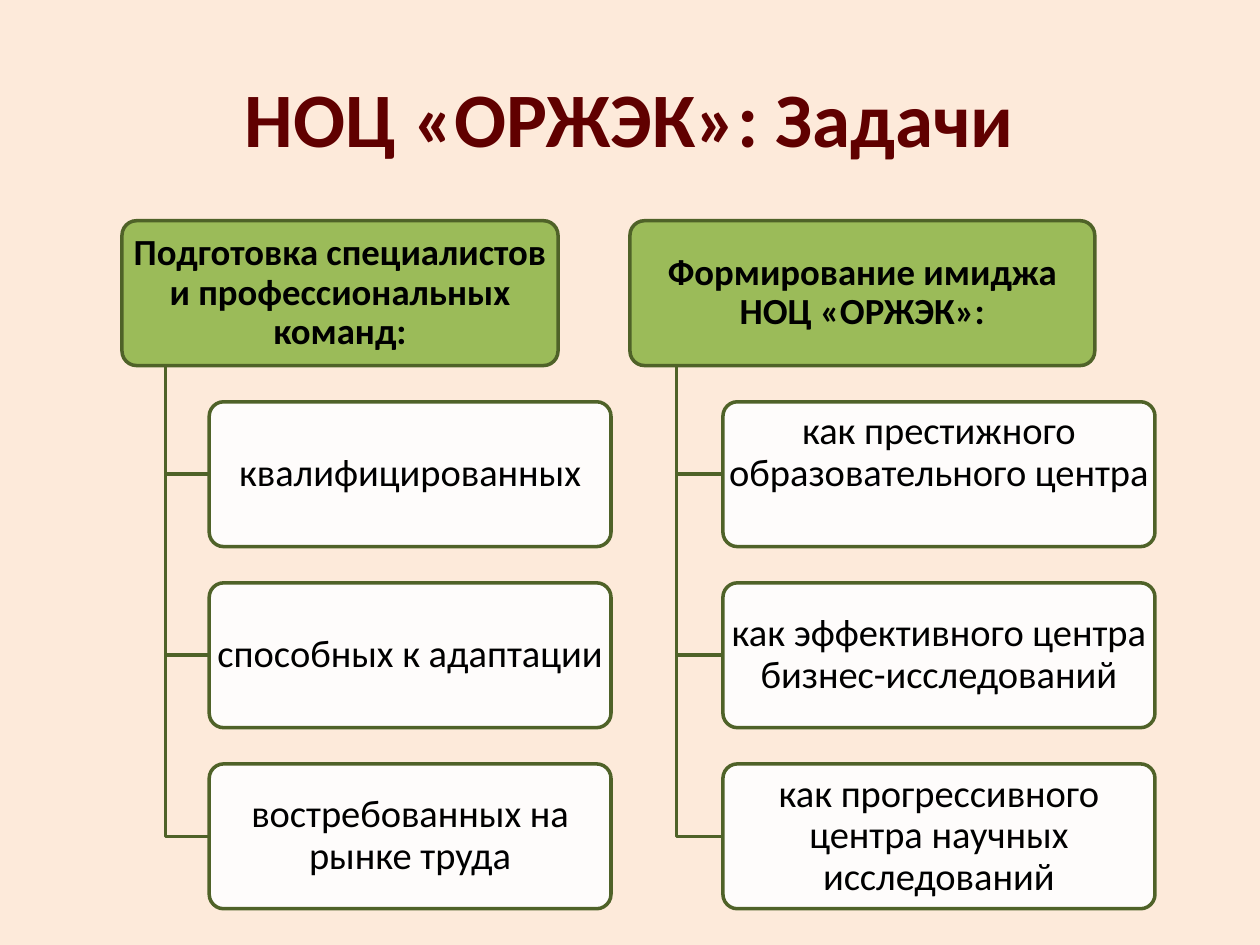
from dataclasses import dataclass

import pptx
import pptx.dml.color
import pptx.enum.shapes
import pptx.enum.text
import pptx.oxml
import pptx.oxml.ns
import pptx.util
from pptx.util import Cm

COLORS = {
    "background": "FDEADA",
    "title": "600000",
    "header": "9BBB59",
    "task": "FFFFFF",
    "line": "4F6228",
    "text": "000000",
}
TOP = 4.45
BOX_HEIGHT = 2.92
PITCH = 3.65


@dataclass
class Task:
    text: str
    bottom: float = 0


@dataclass
class Branch:
    left: float
    width: float
    task_width: float
    header: str
    tasks: list[Task]


BRANCHES = [
    Branch(2.46, 8.79, 8.1, "Подготовка специалистов и профессиональных команд:", [
        Task("квалифицированных"),
        Task("способных к адаптации"),
        Task("востребованных на рынке труда"),
    ]),
    Branch(12.7, 9.37, 8.71, "Формирование имиджа НОЦ «ОРЖЭК»:", [
        Task("как престижного образовательного центра", bottom=0.85),
        Task("как эффективного центра бизнес-исследований"),
        Task("как прогрессивного центра научных исследований"),
    ]),
]


def rgb(name: str) -> pptx.dml.color.RGBColor:
    return pptx.dml.color.RGBColor.from_string(COLORS[name])


def write(sp, text: str, *, size: float, color: str = "text", bold: bool = False,
          spacing: float = 0.9, bottom: float = 0) -> None:
    tf = sp.text_frame
    tf.word_wrap = True
    tf.vertical_anchor = pptx.enum.text.MSO_ANCHOR.MIDDLE
    tf.margin_left = tf.margin_right = tf.margin_top = 0
    tf.margin_bottom = Cm(bottom)
    p = tf.paragraphs[0]
    p.alignment = pptx.enum.text.PP_ALIGN.CENTER
    p.line_spacing = spacing
    r = p.add_run()
    r.text = text
    r.font.name = "Calibri"
    r.font.size = pptx.util.Pt(size)
    r.font.bold = bold
    r.font.color.rgb = rgb(color)


def outline(sp) -> None:
    sp.shadow.inherit = False
    sp.line.color.rgb = rgb("line")
    sp.line.width = pptx.util.Pt(2)


def add_box(s, left: float, top: float, width: float, fill: str):
    sp = s.shapes.add_shape(pptx.enum.shapes.MSO_SHAPE.ROUNDED_RECTANGLE,
                            Cm(left), Cm(top), Cm(width), Cm(BOX_HEIGHT))
    sp.adjustments[0] = 0.1
    sp.fill.solid()
    sp.fill.fore_color.rgb = rgb(fill)
    outline(sp)
    return sp


def set_opacity(sp, percent: int) -> None:
    ns = pptx.oxml.ns.qn
    clr = sp.fill._xPr.find(ns("a:solidFill")).find(ns("a:srgbClr"))
    alpha = pptx.oxml.parse_xml(
        f'<a:alpha {pptx.oxml.ns.nsdecls("a")} val="{percent * 1000}"/>')
    clr.append(alpha)


def add_elbow(s, x: float, top: float, right: float, bottom: float) -> None:
    fb = s.shapes.build_freeform(Cm(x), Cm(top))
    fb.add_line_segments([(Cm(x), Cm(bottom)), (Cm(right), Cm(bottom))], close=False)
    sp = fb.convert_to_shape()
    sp.fill.background()
    outline(sp)


def add_branch(s, branch: Branch) -> None:
    header = add_box(s, branch.left, TOP, branch.width, "header")
    write(header, branch.header, size=21, bold=True)
    trunk = branch.left + 0.1 * branch.width
    task_left = branch.left + 0.2 * branch.width
    for i, task in enumerate(branch.tasks, start=1):
        top = TOP + i * PITCH
        add_elbow(s, trunk, TOP + BOX_HEIGHT, task_left, top + BOX_HEIGHT / 2)
        sp = add_box(s, task_left, top, branch.task_width, "task")
        set_opacity(sp, 90)
        write(sp, task.text, size=22, bottom=task.bottom)


def main() -> None:
    prs = pptx.Presentation()
    prs.slide_width, prs.slide_height = Cm(25.4), Cm(19.05)
    s = prs.slides.add_slide(prs.slide_layouts[6])
    s.background.fill.solid()
    s.background.fill.fore_color.rgb = rgb("background")
    title = s.shapes.add_textbox(Cm(1.27), Cm(0.76), Cm(22.86), Cm(3.18))
    write(title, "НОЦ «ОРЖЭК»: Задачи", size=44, color="title", bold=True, spacing=1.0)
    for branch in BRANCHES:
        add_branch(s, branch)
    prs.save("out.pptx")


if __name__ == "__main__":
    main()
